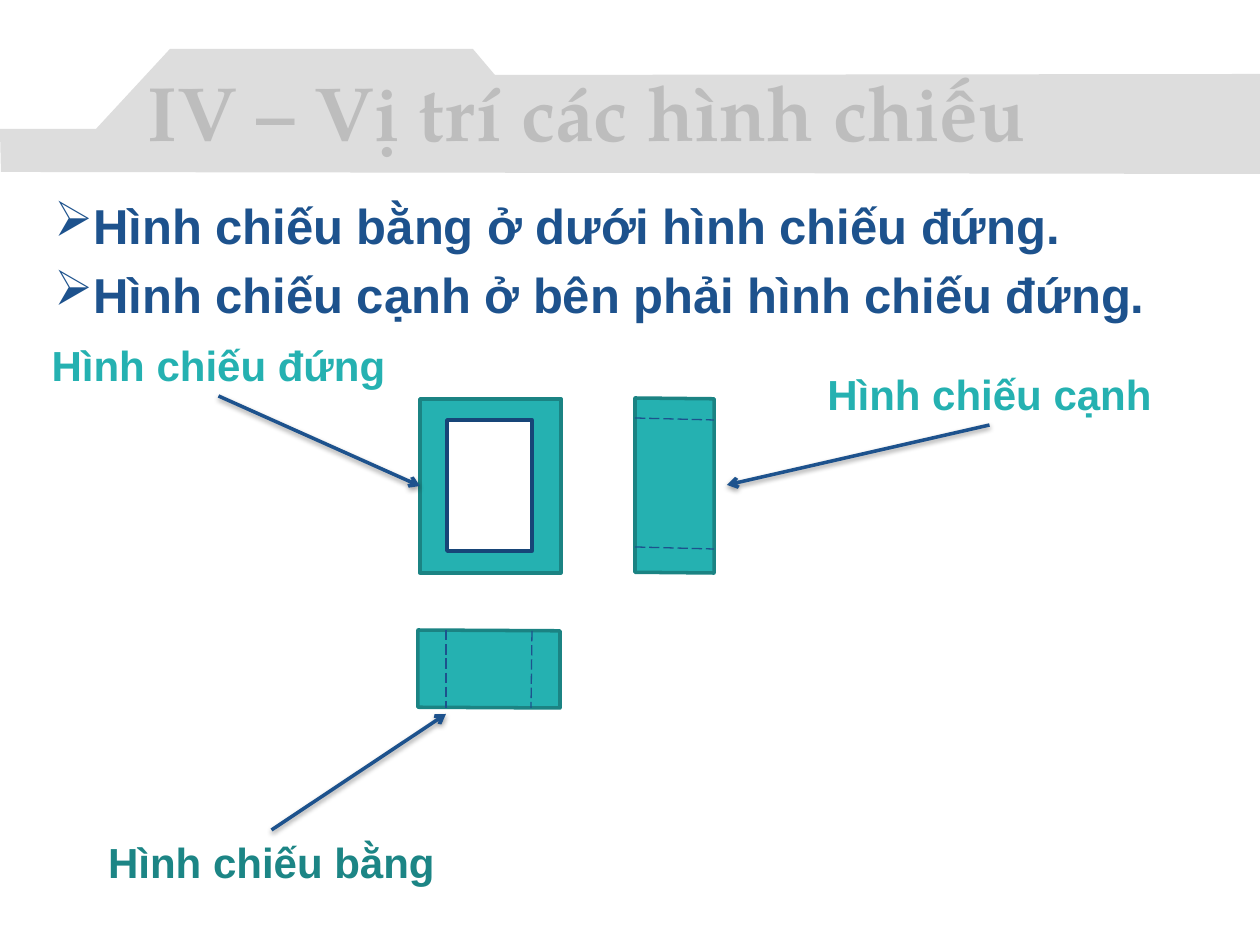
import lxml.etree
import pptx
import pptx.dml.color
import pptx.enum.dml
import pptx.enum.shapes
import pptx.enum.text
import pptx.oxml.ns
import pptx.util

EMU_PER_PX = 914400 / 126
NAVY, TEAL, DEEP_TEAL = "1D528D", "25B1B1", "1B8383"
SHAPES = pptx.enum.shapes.MSO_SHAPE


def px(length):
    return pptx.util.Emu(round(length * EMU_PER_PX))


def colour(hex_code):
    return pptx.dml.color.RGBColor.from_string(hex_code)


def add_child(parent, tag, **attributes):
    child = lxml.etree.SubElement(parent, pptx.oxml.ns.qn(tag))
    for key, value in attributes.items():
        child.set(key, str(value))
    return child


def add_text(shapes, box, lines, size, hex_code, font="Arial", centred=False):
    textbox = shapes.add_textbox(*map(px, box))
    frame = textbox.text_frame
    frame.word_wrap = True
    frame.auto_size = pptx.enum.text.MSO_AUTO_SIZE.SHAPE_TO_FIT_TEXT
    frame.text = "\n".join(lines)
    for paragraph in frame.paragraphs:
        if centred:
            paragraph.alignment = pptx.enum.text.PP_ALIGN.CENTER
        for run in paragraph.runs:
            run.font.name = font
            run.font.size = pptx.util.Pt(size)
            run.font.bold = True
            run.font.color.rgb = colour(hex_code)
    return textbox


def add_face(shapes, kind, box, fill=TEAL, outline=DEEP_TEAL):
    """Draw one filled and outlined face of a projection."""
    face = shapes.add_shape(kind, *map(px, box))
    face.shadow.inherit = False
    face.fill.solid()
    face.fill.fore_color.rgb = colour(fill)
    face.line.color.rgb = colour(outline)
    face.line.width = pptx.util.Pt(2)
    return face


def add_line(shapes, start, end, width):
    """Draw a navy line and return it with its empty effect list."""
    line = shapes.add_connector(
        pptx.enum.shapes.MSO_CONNECTOR.STRAIGHT, *map(px, start + end))
    line.line.color.rgb = colour(NAVY)
    line.line.width = pptx.util.Pt(width)
    effects = add_child(line._element.spPr, "a:effectLst")
    return line, effects


def add_title_band(slide, box):
    left, top, width, height = box
    outline = [(0, 80), (96, 80), (170, 0), (473, 0), (495, 26),
               (width, 25), (width, height), (1, height - 2)]
    points = [(left + x, top + y) for x, y in outline]
    builder = slide.shapes.build_freeform(*points[0], scale=EMU_PER_PX)
    builder.add_line_segments(points[1:], close=True)
    band = builder.convert_to_shape()
    band.shadow.inherit = False
    band.fill.solid()
    band.fill.fore_color.rgb = colour("DDDDDD")
    band.line.fill.background()
    add_text(slide.shapes, (left + 135, top + 9, width - 135, 106),
             ["IV – Vị trí các hình chiếu"], 44, "BDBDBD", "TeX Gyre Pagella")


def add_rules(slide, box):
    """List where each projection sits."""
    rules = add_text(slide.shapes, box,
                     ["Hình chiếu bằng ở dưới hình chiếu đứng.",
                      "Hình chiếu cạnh ở bên phải hình chiếu đứng."], 28, NAVY)
    for index, paragraph in enumerate(rules.text_frame.paragraphs):
        properties = paragraph._p.get_or_add_pPr()
        properties.set("marL", str(px(39)))
        properties.set("indent", str(-px(39)))
        add_child(properties, "a:buChar", char="➢")
        if index:
            paragraph.space_before = pptx.util.Pt(6)


def add_front_view(slide, box):
    left, top, width, height = box
    view = slide.shapes.add_group_shape().shapes
    front = add_face(view, SHAPES.RECTANGLE, box)
    add_face(view, SHAPES.RECTANGLE,
             (left + 27, top + 21, width - 56, height - 43), "FFFFFF", "174578")
    return front


def add_hidden_edge_view(slide, box, edges):
    """Draw a slightly skewed face with dashed hidden edges inside its box."""
    left, top, width, height = box
    view = slide.shapes.add_group_shape().shapes
    # The face is turned a quarter, so its own width is the height of the box.
    face = add_face(view, SHAPES.PARALLELOGRAM,
                    (left + (width - height) / 2, top + (height - width) / 2,
                     height, width))
    face.rotation = 270
    face.adjustments[0] = 0.01
    for x1, y1, x2, y2 in edges:
        edge, _ = add_line(view, (left + x1, top + y1), (left + x2, top + y2), 0.75)
        edge.line.dash_style = pptx.enum.dml.MSO_LINE.LONG_DASH


def add_callout(slide, box, name, hex_code, side, target, target_face=None):
    """Name a projection and point at it from the given side of the name."""
    callout = slide.shapes.add_group_shape().shapes
    label = add_text(callout, box, [name], 24, hex_code, centred=True)
    arrow, effects = add_line(callout, box[:2], target, 2)
    arrow.begin_connect(label, side)
    if target_face is not None:
        arrow.end_connect(target_face, 1)
    add_child(arrow.line._get_or_add_ln(), "a:tailEnd", type="arrow")
    shadow = add_child(effects, "a:outerShdw", blurRad=pptx.util.Pt(3.1),
                       dist=pptx.util.Pt(1.6), dir=90 * 60000, rotWithShape=0)
    add_child(add_child(shadow, "a:srgbClr", val="000000"), "a:alpha", val=38000)


def main():
    deck = pptx.Presentation()
    deck.slide_width, deck.slide_height = px(1260), px(945)
    slide = deck.slides.add_slide(deck.slide_layouts[6])

    add_title_band(slide, (0, 49, 1260, 125))
    add_rules(slide, (42, 189, 1207, 142))

    front = add_front_view(slide, (420, 399, 141, 174))
    add_hidden_edge_view(slide, (635, 398, 79, 175),
                         [(0, 149, 79, 151), (0, 20, 79, 22)])
    add_hidden_edge_view(slide, (418, 630, 142, 78),
                         [(28, 0, 28, 78), (114, 1, 113, 78)])

    bottom, top = 2, 0
    add_callout(slide, (11, 333, 415, 63), "Hình chiếu đứng", TEAL,
                bottom, (420, 486), front)
    add_callout(slide, (64, 830, 415, 63), "Hình chiếu bằng", "1C8585",
                top, (446, 714))
    add_callout(slide, (798, 362, 383, 63), "Hình chiếu cạnh", TEAL,
                bottom, (727, 485))
    deck.save("out.pptx")


if __name__ == "__main__":
    main()
